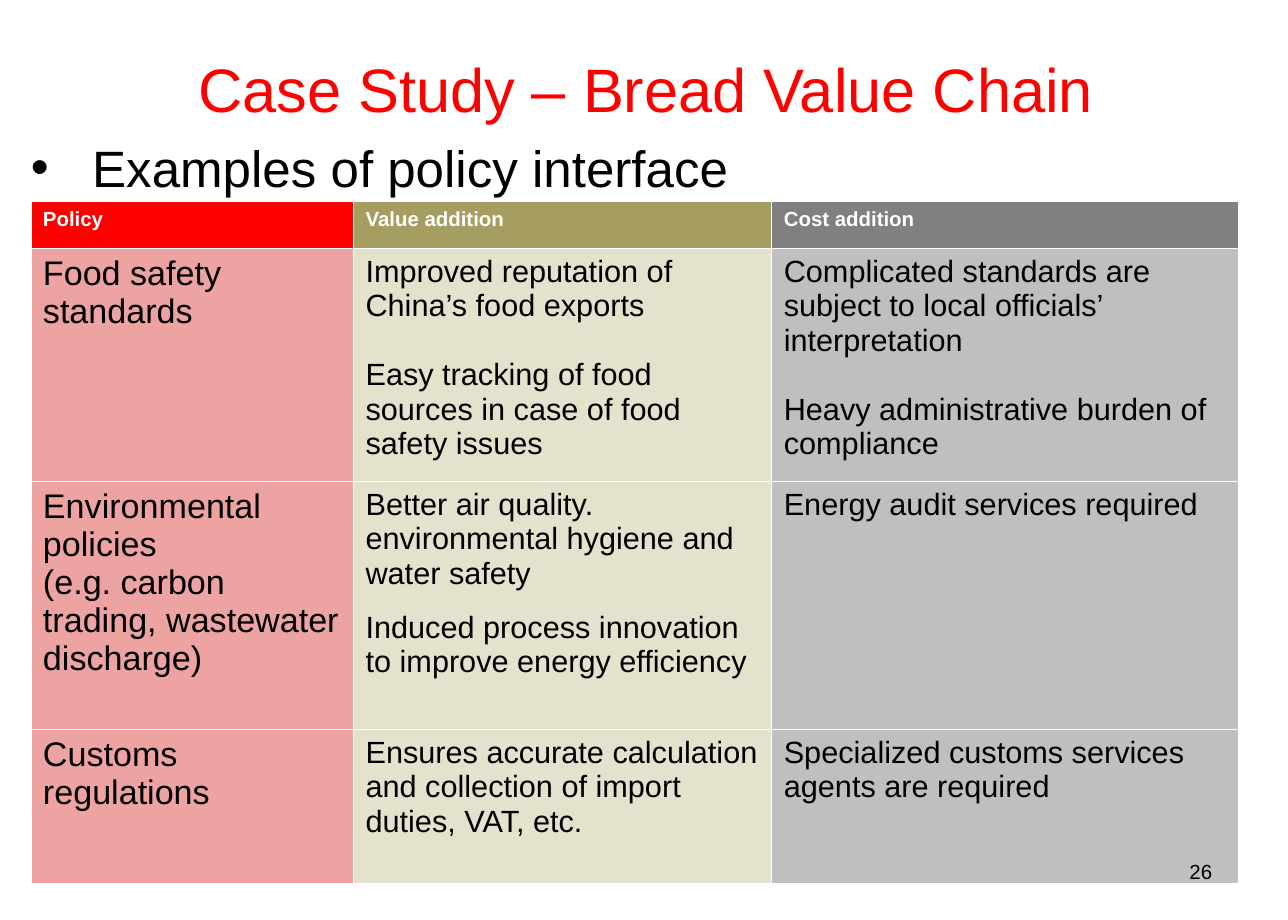
from lxml import etree
from pptx import Presentation
from pptx import util as u
from pptx.dml.color import RGBColor
from pptx.enum import text
from pptx.oxml import ns


def rgb(value):
    return RGBColor.from_string(value)


class Deck:
    font = "Arial"
    line = "FFFFFF"

    def __init__(self, width, height):
        self.prs = Presentation()
        self.prs.slide_width = u.Cm(width)
        self.prs.slide_height = u.Cm(height)
        self.s = self.prs.slides.add_slide(self.prs.slide_layouts[6])

    def paragraphs(self, tf, lines, size, color="000000", bold=False, align="LEFT", gap=0):
        tf.word_wrap = True
        for i, line in enumerate(lines):
            p = tf.paragraphs[0] if i == 0 else tf.add_paragraph()
            p.alignment = text.PP_ALIGN[align]
            p.space_before = u.Pt(gap if i else 0)
            r = p.add_run()
            r.text = line
            style = {"name": self.font, "size": u.Pt(size), "bold": bold}
            for key, value in style.items():
                setattr(r.font, key, value)
            r.font.color.rgb = rgb(color)

    def textbox(self, box, line, size, anchor="TOP", margin=0.25, **style):
        sp = self.s.shapes.add_textbox(*map(u.Cm, box))
        tf = sp.text_frame
        frame = {
            "margin_left": u.Cm(margin),
            "margin_right": u.Cm(margin),
            "margin_top": u.Cm(0.13),
            "margin_bottom": u.Cm(0.13),
            "vertical_anchor": text.MSO_ANCHOR[anchor],
        }
        for key, value in frame.items():
            setattr(tf, key, value)
        self.paragraphs(tf, [line], size, **style)
        return tf

    def bullet(self, box, line, size, indent):
        p = self.textbox(box, line, size, margin=0).paragraphs[0]
        ppr = p._p.get_or_add_pPr()
        ppr.set("marL", str(u.Cm(indent)))
        ppr.set("indent", str(-u.Cm(indent)))
        etree.SubElement(ppr, ns.qn("a:buFont"), typeface=self.font)
        etree.SubElement(ppr, ns.qn("a:buChar"), char="•")

    def borders(self, cell):
        tcpr = cell._tc.get_or_add_tcPr()
        for i, side in enumerate(("lnL", "lnR", "lnT", "lnB")):
            ln = etree.Element(ns.qn(f"a:{side}"), w=str(u.Pt(1)))
            fill = etree.SubElement(ln, ns.qn("a:solidFill"))
            etree.SubElement(fill, ns.qn("a:srgbClr"), val=self.line)
            tcpr.insert(i, ln)

    def table(self, left, top, widths, heights, headers, rows, head_fills, body_fills):
        box = (left, top, sum(widths), sum(heights))
        frame = self.s.shapes.add_table(len(heights), len(widths), *map(u.Cm, box))
        tbl = frame.table
        tbl.first_row = tbl.horz_banding = False
        for col, width in zip(tbl.columns, widths):
            col.width = u.Cm(width)
        for row, height in zip(tbl.rows, heights):
            row.height = u.Cm(height)
        for i, (gap, *cells) in enumerate([(0, *headers), *rows]):
            for j, lines in enumerate(cells):
                cell = tbl.cell(i, j)
                cell.margin_left = cell.margin_right = u.Cm(0.25)
                cell.margin_top = cell.margin_bottom = u.Cm(0.13)
                cell.fill.solid()
                cell.fill.fore_color.rgb = rgb(body_fills[j] if i else head_fills[j])
                self.borders(cell)
                if i:
                    self.paragraphs(cell.text_frame, lines, 18 if j else 20, gap=gap if j else 0)
                else:
                    self.paragraphs(cell.text_frame, lines, 12, color="FFFFFF", bold=True)


def main():
    deck = Deck(26.67, 19.05)
    deck.bullet((0.64, 2.69, 25.02, 4.93), "Examples of policy interface", 30, 1.27)
    deck.textbox((1.83, 0.91, 23.09, 1.8), "Case Study – Bread Value Chain", 36,
                 anchor="BOTTOM", margin=0, color="FF0000", align="CENTER")
    deck.table(
        0.64, 4.17, (6.68, 8.66, 9.68), (0.97, 4.83, 5.13, 3.2),
        (["Policy"], ["Value addition"], ["Cost addition"]),
        [
            (20.5,
             ["Food safety standards"],
             ["Improved reputation of China’s food exports",
              "Easy tracking of food sources in case of food safety issues"],
             ["Complicated standards are subject to local officials’ interpretation",
              "Heavy administrative burden of compliance"]),
            (11.5,
             ["Environmental policies", "(e.g. carbon trading, wastewater discharge)"],
             ["Better air quality. environmental hygiene and water safety",
              "Induced process innovation to improve energy efficiency"],
             ["Energy audit services required"]),
            (0,
             ["Customs regulations"],
             ["Ensures accurate calculation and collection of import duties, VAT, etc."],
             ["Specialized customs services agents are required"]),
        ],
        ("FF0000", "A69D61", "808080"), ("ECA3A2", "E4E1CC", "BFBFBF"))
    deck.textbox((19.13, 17.65, 6.22, 1.02), "26", 12, align="RIGHT")
    deck.prs.save("out.pptx")


if __name__ == "__main__":
    main()
